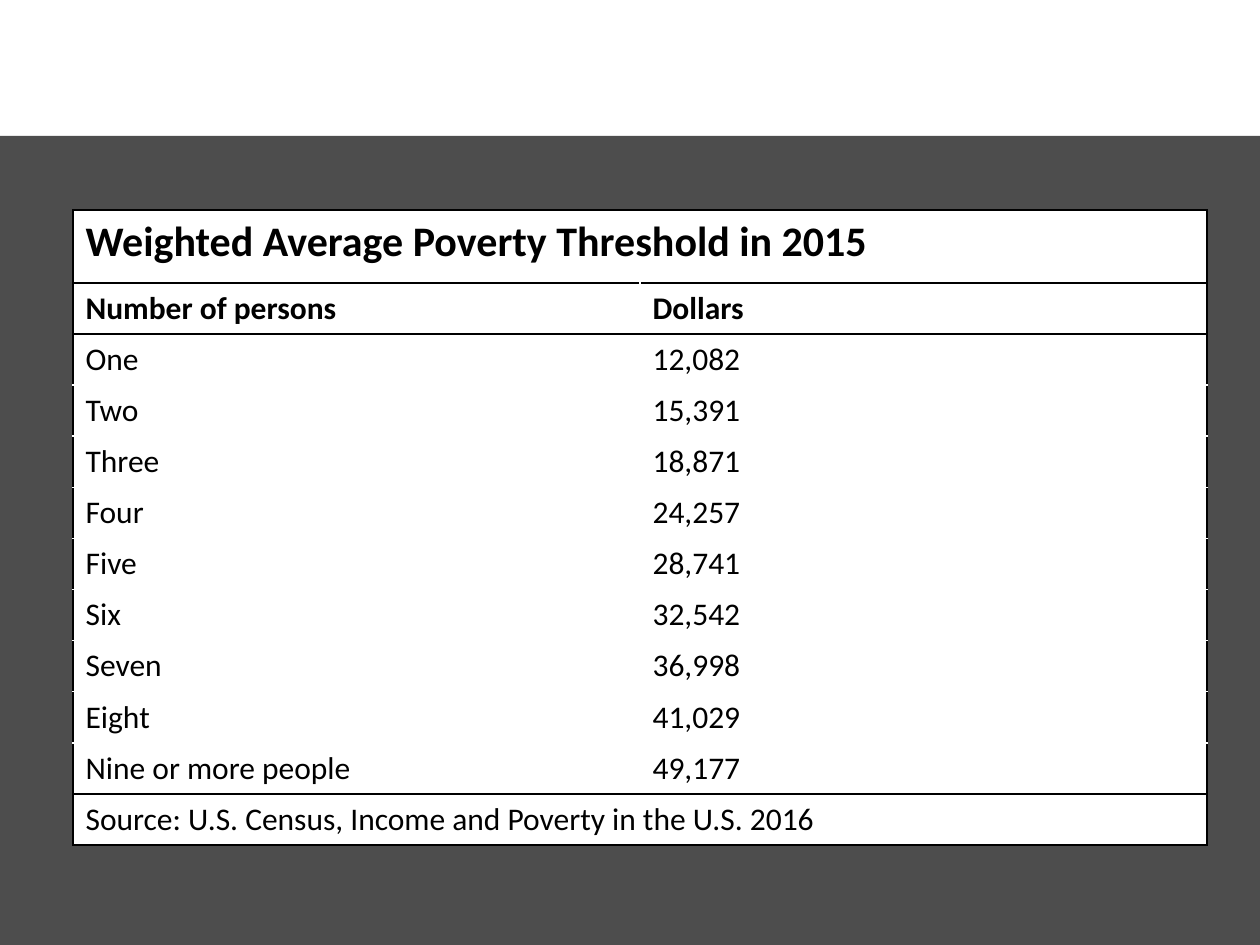
from pptx import Presentation
from pptx.dml.color import RGBColor as RGB
from pptx.enum.shapes import MSO_SHAPE as SHAPE
from pptx.oxml import parse_xml
from pptx.oxml.ns import nsdecls
from pptx.util import Emu, Pt

BLACK = RGB(0, 0, 0)
WHITE = RGB(255, 255, 255)
GRAY = RGB(0x4D, 0x4D, 0x4D)

ROWS = [
    ("Weighted Average Poverty Threshold in 2015",),
    ("Number of persons", "Dollars"),
    ("One", "12,082"),
    ("Two", "15,391"),
    ("Three", "18,871"),
    ("Four", "24,257"),
    ("Five", "28,741"),
    ("Six", "32,542"),
    ("Seven", "36,998"),
    ("Eight", "41,029"),
    ("Nine or more people", "49,177"),
    ("Source: U.S. Census, Income and Poverty in the U.S. 2016",),
]
LAST = len(ROWS) - 1
RULES = {0, 1, 2, LAST, LAST + 1}


def px(n):
    return Emu(round(n * 914400 / 126))


def add_panel(slide, x, y, w, h):
    panel = slide.shapes.add_shape(SHAPE.RECTANGLE, px(x), px(y), px(w), px(h))
    panel.shadow.inherit = False
    panel.fill.solid()
    panel.fill.fore_color.rgb = GRAY
    panel.line.fill.background()


def set_edges(cell, **edges):
    props = cell._tc.get_or_add_tcPr()
    for i, (side, color) in enumerate(edges.items()):
        props.insert(i, parse_xml(
            f'<a:ln{side} {nsdecls("a")} w="{Pt(1)}"><a:solidFill>'
            f'<a:srgbClr val="{color}"/></a:solidFill></a:ln{side}>'))


def style_cell(cell, row, col, wide):
    cell.fill.solid()
    cell.fill.fore_color.rgb = WHITE
    set_edges(
        cell,
        L=BLACK if wide or col == 0 else WHITE,
        R=BLACK if wide or col == 1 else WHITE,
        T=BLACK if row in RULES else WHITE,
        B=BLACK if row + 1 in RULES else WHITE,
    )


def set_text(cell, text, row):
    cell.text_frame.text = text
    font = cell.text_frame.paragraphs[0].runs[0].font
    font.name = "Calibri"
    font.size = Pt(24 if row == 0 else 18)
    font.bold = row < 2
    font.color.rgb = BLACK


def add_grid(slide, x, y, w, head, step):
    high = head + step * LAST
    frame = slide.shapes.add_table(len(ROWS), 2, px(x), px(y), px(w), px(high))
    table = frame.table
    for r, texts in enumerate(ROWS):
        table.rows[r].height = px(step if r else head)
        wide = len(texts) == 1
        for c in range(2):
            style_cell(table.cell(r, c), r, c, wide)
        if wide:
            table.cell(r, 0).merge(table.cell(r, 1))
        for c, text in enumerate(texts):
            set_text(table.cell(r, c), text, r)


def main():
    deck = Presentation()
    deck.slide_width, deck.slide_height = px(1260), px(945)
    slide = deck.slides.add_slide(deck.slide_layouts[6])
    add_panel(slide, 0, 136, 1260, 809)
    add_grid(slide, 73, 210, 1134, 73, 51)
    deck.save("out.pptx")


if __name__ == "__main__":
    main()
